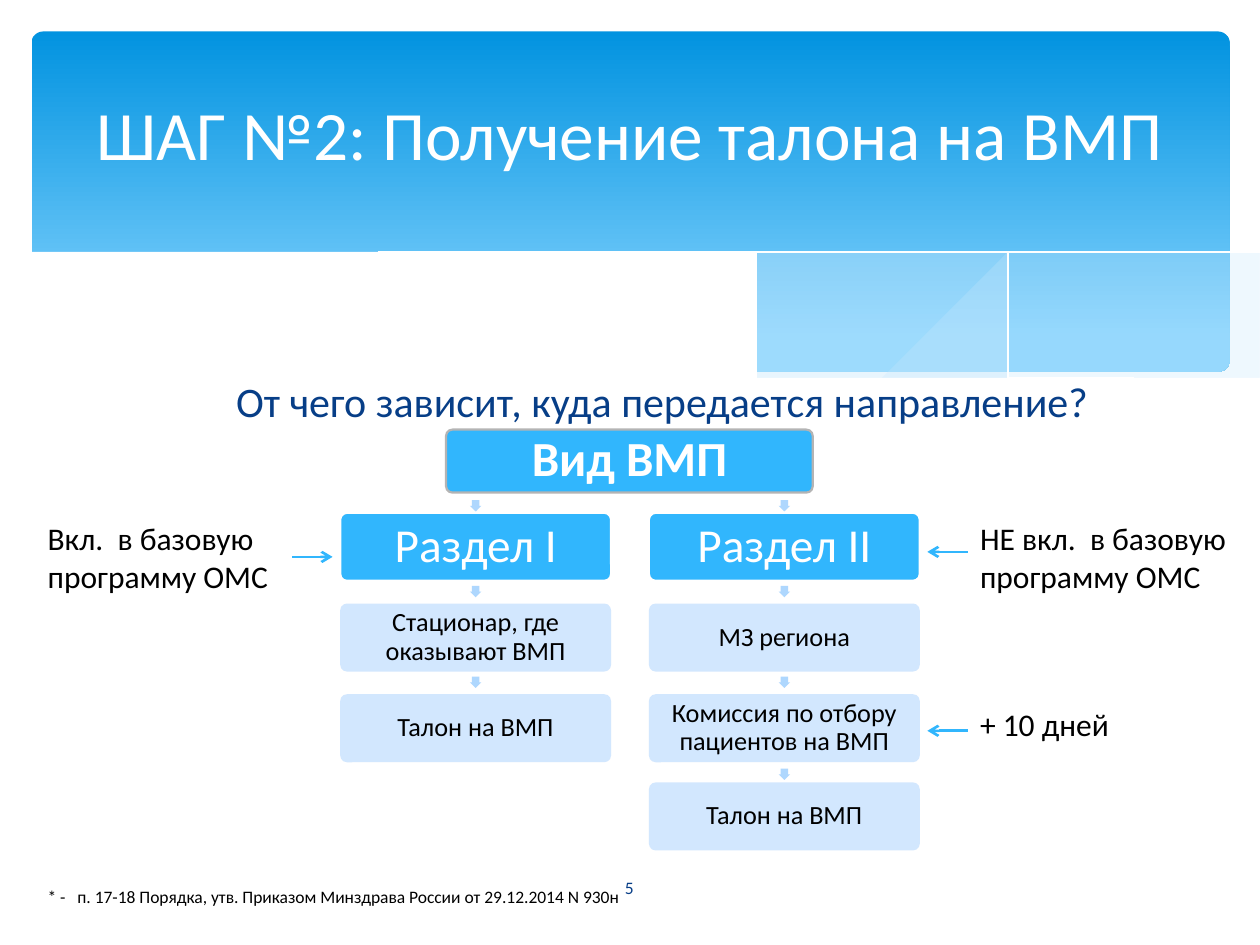
from dataclasses import dataclass
from pptx import Presentation
from pptx.dml.color import RGBColor as RGB
from pptx.enum.shapes import MSO_CONNECTOR as Conn, MSO_SHAPE as Form
from pptx.enum.text import MSO_ANCHOR as Anchor, MSO_AUTO_SIZE as Fit, PP_ALIGN as Align
from pptx.oxml.ns import qn
from pptx.util import Inches, Pt
from lxml.etree import SubElement as Sub


@dataclass(frozen=True)
class Theme:
    font: str = "Calibri"
    white: str = "FFFFFF"
    black: str = "000000"
    navy: str = "073E87"
    blue: str = "31B6FD"
    pale: str = "CEE5FE"
    dart: str = "AED7FE"
    edge: str = "B4B4B4"
    wave: str = "C6E7FC"
    sky: tuple = ("0293E0", "83D3FE")
    title: float = 39.6
    top: float = 28
    head: float = 27
    lead: float = 24
    label: float = 18
    step: float = 15
    note: float = 10


def curve(knots, steps=6):
    """Return points of a smooth line through the knots."""
    pts = [knots[0], *knots, knots[-1]]
    out = [knots[0]]
    for a, b, c, d in zip(pts, pts[1:], pts[2:], pts[3:]):
        for i in range(1, steps + 1):
            t = i / steps
            out.append(tuple(
                q + t / 2 * (r - p + t * (2 * p - 5 * q + 4 * r - s + t * (3 * q - p - 3 * r + s)))
                for p, q, r, s in zip(a, b, c, d)))
    return out


class Deck:
    """Holds the theme and the current slide."""

    def __init__(self, theme):
        self.theme = theme
        self.file = Presentation()
        self.file.slide_width, self.file.slide_height = Inches(10), Inches(7.5)
        self.slide = self.file.slides.add_slide(self.file.slide_layouts[1])
        self.shapes = self.slide.shapes

    def paint(self, shape, fill=None, line=None, width=1.25, alpha=None):
        shape.shadow.inherit = False
        if fill:
            shape.fill.solid()
            shape.fill.fore_color.rgb = RGB.from_string(fill)
            if alpha:
                tint = shape._element.spPr.find(qn("a:solidFill"))[0]
                Sub(tint, qn("a:alpha"), val=str(alpha * 1000))
        else:
            shape.fill.background()
        if line:
            shape.line.color.rgb = RGB.from_string(line)
            shape.line.width = Pt(width)
        else:
            shape.line.fill.background()

    def words(self, frame, text, size, color, align=Align.CENTER, bold=False):
        para = frame.paragraphs[0]
        para.alignment = align
        run = para.add_run()
        run.text = text
        font = run.font
        font.name, font.size, font.bold = self.theme.font, Pt(size), bold
        font.color.rgb = RGB.from_string(color)
        return para

    def panel(self, x, y, w, h):
        shape = self.shapes.add_shape(Form.ROUNDED_RECTANGLE, *map(Inches, (x, y, w, h)))
        shape.adjustments[0] = 0.034
        self.paint(shape, self.theme.white)
        shape.fill.gradient()
        shape.fill.gradient_angle = 270
        for stop, spot, color in zip(shape.fill.gradient_stops, (0, 0.9), self.theme.sky):
            stop.position = spot
            stop.color.rgb = RGB.from_string(color)

    def sweep(self, pts, closed=True, **look):
        pen = self.shapes.build_freeform(*pts[0], scale=Inches(1))
        pen.add_line_segments(pts[1:], close=closed)
        self.paint(pen.convert_to_shape(), **look)

    def holder(self, index, box, text, size, color, anchor):
        shape = self.slide.placeholders[index]
        shape.left, shape.top, shape.width, shape.height = map(Inches, box)
        self.shapes._spTree.append(shape._element)
        frame = shape.text_frame
        frame.auto_size, frame.vertical_anchor = Fit.NONE, anchor
        para = self.words(frame, text, size, color)
        props = para._p.get_or_add_pPr()
        props.set("marL", "0")
        props.set("indent", "0")
        Sub(props, qn("a:buNone"))

    def label(self, x, y, w, h, text, size, color=None, wrap=True, align=Align.LEFT, anchor=Anchor.TOP):
        frame = self.shapes.add_textbox(*map(Inches, (x, y, w, h))).text_frame
        frame.word_wrap, frame.vertical_anchor = wrap, anchor
        self.words(frame, text, size, color or self.theme.black, align)

    def box(self, x, y, text, size, color, w=2.15, h=0.54, bold=False, **look):
        shape = self.shapes.add_shape(Form.ROUNDED_RECTANGLE, *map(Inches, (x, y, w, h)))
        shape.adjustments[0] = 0.1
        self.paint(shape, **look)
        frame = shape.text_frame
        frame.word_wrap, frame.vertical_anchor = True, Anchor.MIDDLE
        frame.margin_left = frame.margin_right = Inches(0.04)
        frame.margin_top = frame.margin_bottom = Inches(0.04)
        self.words(frame, text, size, color, bold=bold).line_spacing = 0.9

    def dart(self, x, y):
        shape = self.shapes.add_shape(Form.RIGHT_ARROW, *map(Inches, (x, y, 0.09, 0.09)))
        shape.rotation = 90
        shape.adjustments[0] = 0.667
        self.paint(shape, self.theme.dart)

    def arrow(self, x, end, y):
        line = self.shapes.add_connector(Conn.STRAIGHT, *map(Inches, (x, y, end, y)))
        line.line.color.rgb = RGB.from_string(self.theme.blue)
        line.line.width = Pt(1.5)
        Sub(line.line._get_or_add_ln(), qn("a:tailEnd"), type="arrow")
        Sub(line._element.spPr, qn("a:effectLst"))


def banner(deck):
    """Draw the blue panel and its waves."""
    look = deck.theme
    deck.panel(0.25, 0.25, 9.51, 2.7)
    rise = [(6.61, 2.65), (7.29, 2.53), (8.05, 2.37), (8.76, 2.2), (9.35, 2.07), (9.76, 2)]
    fall = [(9.76, 2.47), (9.35, 2.62), (8.97, 2.7), (8.54, 2.76), (8.03, 2.78), (7.45, 2.75), (6.61, 2.65)]
    deck.sweep(curve(rise) + curve(fall), fill=look.wave, alpha=29)
    over = [(2.86, 1.91), (3.28, 1.87), (3.8, 1.85), (4.42, 1.89), (5.14, 1.98), (5.84, 2.11),
            (6.68, 2.31), (7.41, 2.47), (8.07, 2.6), (8.93, 2.73)]
    under = [(8.93, 2.73), (8.48, 2.77), (7.96, 2.78), (7.36, 2.75), (6.65, 2.66), (5.84, 2.52),
             (4.91, 2.32), (4.04, 2.11), (3.42, 1.99), (2.86, 1.91)]
    deck.sweep(curve(over) + curve(under), fill=look.wave, alpha=40)
    down = [(3.09, 1.95), (3.53, 1.89), (4.16, 1.87), (4.89, 1.9), (5.56, 1.97), (6.36, 2.08),
            (7.27, 2.26), (8.31, 2.51), (9.07, 2.72)]
    up = [(6.13, 2.57), (6.95, 2.35), (7.76, 2.16), (8.66, 1.99), (9.24, 1.9), (9.75, 1.85)]
    for line in (down, up):
        deck.sweep(curve(line), closed=False, line=look.white, width=0)
    crest = [(0.23, 2.13), (0.59, 1.99), (1.06, 1.89), (1.77, 1.84), (2.5, 1.86), (3.4, 1.97),
             (4.47, 2.2), (5.29, 2.39), (6.03, 2.54), (6.88, 2.68), (7.61, 2.75), (8.23, 2.77),
             (8.75, 2.73), (9.2, 2.65), (9.77, 2.46)]
    deck.sweep(curve(crest) + [(9.77, 3.29), (0.23, 3.29)], fill=look.white)


def flow(deck):
    """Draw the tree of steps."""
    look = deck.theme
    tree = {
        2.7: ("Раздел I", "Стационар, где оказывают ВМП", "Талон на ВМП"),
        5.15: ("Раздел II", "МЗ региона", "Комиссия по отбору пациентов на ВМП", "Талон на ВМП"),
    }
    deck.box(3.54, 3.41, "Вид ВМП", look.top, look.white, 2.91, 0.5, True, fill=look.blue, line=look.edge)
    for x, (head, *steps) in tree.items():
        deck.dart(x + 1.03, 3.97)
        deck.box(x, 4.07, head, look.head, look.white, fill=look.blue, line=look.white)
        for text, y, gap in zip(steps, (4.79, 5.51, 6.21), (0.14, 0.14, 0.11)):
            deck.dart(x + 1.03, y - gap)
            deck.box(x, y, text, look.step, look.black, fill=look.pale, alpha=90)


def main():
    look = Theme()
    deck = Deck(look)
    banner(deck)
    deck.holder(1, (0.95, 2.93, 8.61, 3.77), "От чего зависит, куда передается направление?",
                look.lead, look.navy, Anchor.TOP)
    deck.holder(0, (0.5, 0.37, 9, 1.37), "ШАГ №2: Получение талона на ВМП",
                look.title, look.white, Anchor.MIDDLE)
    deck.label(4.36, 6.84, 1.27, 0.4, "5", look.note, look.navy, align=Align.CENTER, anchor=Anchor.MIDDLE)
    deck.label(0.28, 6.98, 4.73, 0.27,
               "* -   п. 17-18 Порядка, утв. Приказом Минздрава России от 29.12.2014 N 930н",
               look.note, wrap=False)
    flow(deck)
    for x, y, h, text in ((0.28, 4.07, 0.71, "Вкл.  в базовую программу ОМС"),
                          (7.68, 4.07, 0.71, "НЕ вкл.  в базовую программу ОМС"),
                          (7.68, 5.55, 0.4, "+ 10 дней")):
        deck.label(x, y, 2.44, h, text, look.label)
    for x, end, y in ((2.32, 2.64, 4.42), (7.68, 7.36, 4.38), (7.68, 7.36, 5.8)):
        deck.arrow(x, end, y)
    deck.file.save("out.pptx")


if __name__ == "__main__":
    main()
